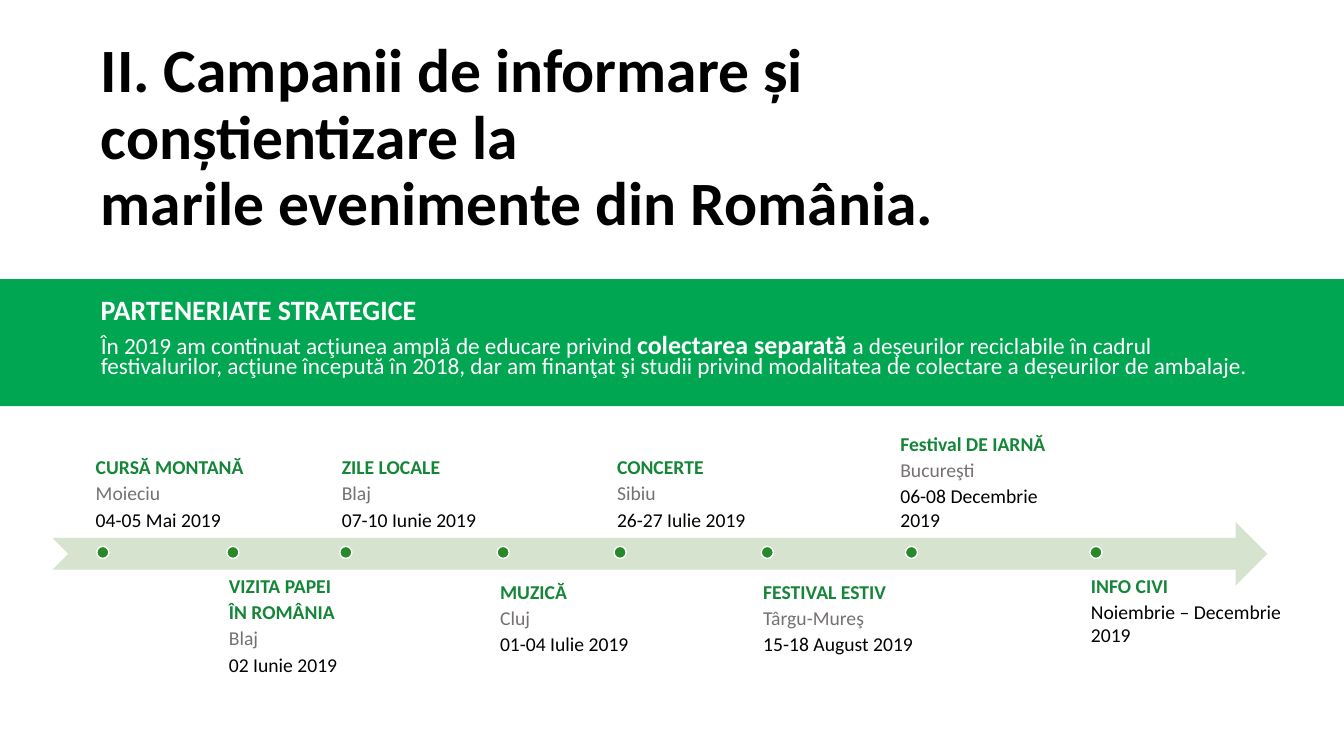
from dataclasses import dataclass

from lxml import etree
from pptx import Presentation
from pptx.dml.color import RGBColor
from pptx.enum import shapes, text
from pptx.oxml.ns import qn
from pptx.util import Inches, Pt


@dataclass(frozen=True)
class Theme:
    font: str = "Calibri"
    band: str = "00A651"
    arrow: str = "D5E3CF"
    dot: str = "278A2A"
    name: str = "158638"
    place: str = "767171"
    black: str = "000000"
    white: str = "FFFFFF"
    title_size: float = 44
    heading_size: float = 20
    body_size: float = 16.6
    strong_size: float = 18.5
    event_size: float = 14


THEME = Theme()

EVENTS = [
    (0.9, 0.96, 1.64, ["CURSĂ MONTANĂ"], "Moieciu", "04-05 Mai 2019"),
    (2.22, 2.25, 1.64, ["VIZITA PAPEI", "ÎN ROMÂNIA"], "Blaj", "02 Iunie 2019"),
    (3.34, 3.37, 2.08, ["ZILE LOCALE"], "Blaj", "07-10 Iunie 2019"),
    (4.91, 4.93, 1.64, ["MUZICĂ"], "Cluj", "01-04 Iulie 2019"),
    (6.07, 6.09, 1.9, ["CONCERTE"], "Sibiu", "26-27 Iulie 2019"),
    (7.52, 7.55, 2.04, ["FESTIVAL ESTIV"], "Târgu-Mureş", "15-18 August 2019"),
    (8.88, 8.98, 1.8, ["Festival DE IARNĂ"], "Bucureşti", "06-08 Decembrie 2019"),
    (10.77, 10.81, 2.04, ["INFO CIVI"], None, "Noiembrie – Decembrie 2019"),
]
LOWERED = {"MUZICĂ", "FESTIVAL ESTIV"}


def rgb(value):
    return RGBColor.from_string(value)


def place(sp, x, y, w, h):
    sp.left, sp.top, sp.width, sp.height = map(Inches, (x, y, w, h))


def set_frame(sp, anchor=text.MSO_ANCHOR.TOP, inset=None):
    tf = sp.text_frame
    tf.word_wrap = True
    tf.auto_size = text.MSO_AUTO_SIZE.NONE
    tf.vertical_anchor = anchor
    if inset is not None:
        tf.margin_left = tf.margin_right = Inches(inset)
        tf.margin_top = tf.margin_bottom = Inches(inset)
    return tf


def add_paragraph(tf, first, spacing=1.0, after=0):
    p = tf.paragraphs[0] if first else tf.add_paragraph()
    p.alignment = text.PP_ALIGN.LEFT
    p.line_spacing = spacing
    p.space_before = Pt(0)
    p.space_after = Pt(after)
    return p


def add_text(p, words, size, color, bold=False):
    r = p.add_run()
    r.text = words
    r.font.name = THEME.font
    r.font.size = Pt(size)
    r.font.bold = bold
    r.font.color.rgb = rgb(color)
    return r


def add_shape(s, kind, box, fill, line=None):
    sp = s.shapes.add_shape(kind, *map(Inches, box))
    sp.shadow.inherit = False
    sp.fill.solid()
    sp.fill.fore_color.rgb = rgb(fill)
    if line:
        sp.line.color.rgb = rgb(line)
        sp.line.width = Pt(1)
    else:
        sp.line.fill.background()
    return sp


def add_title(s, x, y, w, h):
    sp = s.shapes.title
    place(sp, x, y, w, h)
    tf = set_frame(sp)
    lines = ["II. Campanii de informare și conștientizare la", "marile evenimente din România."]
    for i, line in enumerate(lines):
        p = add_paragraph(tf, i == 0, spacing=0.9)
        add_text(p, line, THEME.title_size, THEME.black, bold=True)


def add_band(s, x, y, w, h):
    add_shape(s, shapes.MSO_SHAPE.RECTANGLE, (x, y, w, h), THEME.band)
    heading = s.shapes.add_textbox(*map(Inches, (x + 0.9, y + 0.08, 11.39, 0.44)))
    p = add_paragraph(set_frame(heading), True)
    add_text(p, "PARTENERIATE STRATEGICE", THEME.heading_size, THEME.white, bold=True)

    body = s.placeholders[1]
    place(body, x + 0.9, y + 0.52, 11.67, h - 0.52)
    s.shapes._spTree.append(body._element)
    p = add_paragraph(set_frame(body), True, spacing=0.7)
    pPr = p._p.get_or_add_pPr()
    pPr.set("marL", "0")
    pPr.set("indent", "0")
    etree.SubElement(pPr, qn("a:buNone"))
    add_text(p, "În 2019 am continuat acţiunea amplă de educare privind ", THEME.body_size, THEME.white)
    add_text(p, "colectarea separată ", THEME.strong_size, THEME.white, bold=True)
    add_text(p, "a deşeurilor reciclabile în cadrul festivalurilor, acţiune începută în 2018, "
                "dar am finanţat şi studii privind modalitatea de colectare a deșeurilor de ambalaje.",
             THEME.body_size, THEME.white)


def add_event(s, box, anchor, names, town, date):
    sp = s.shapes.add_textbox(*map(Inches, box))
    tf = set_frame(sp, anchor, inset=0.05)
    lines = [(name, THEME.name, True) for name in names]
    if town:
        lines.append((town, THEME.place, False))
    lines.append((date, THEME.black, False))
    for i, (words, color, bold) in enumerate(lines):
        p = add_paragraph(tf, i == 0, after=2)
        add_text(p, words, THEME.event_size, color, bold)


def add_timeline(s, x, y, w, h):
    add_shape(s, shapes.MSO_SHAPE.NOTCHED_RIGHT_ARROW, (x, y, w, h), THEME.arrow)
    for i, (label_x, dot_x, label_w, names, town, date) in enumerate(EVENTS):
        if i % 2 == 0 and i < 7:
            box, anchor = (label_x, y - 1.13, label_w, 1.27), text.MSO_ANCHOR.BOTTOM
        else:
            drop = 0.06 if names[0] in LOWERED else 0
            box, anchor = (label_x, y + 0.46 + drop, label_w, 1.03), text.MSO_ANCHOR.TOP
        add_event(s, box, anchor, names, town, date)
        add_shape(s, shapes.MSO_SHAPE.OVAL, (dot_x, y + 0.24, 0.12, 0.12), THEME.dot, THEME.white)


def main():
    prs = Presentation()
    prs.slide_width, prs.slide_height = Inches(13.33), Inches(7.5)
    s = prs.slides.add_slide(prs.slide_layouts[1])
    add_title(s, 0.9, 0.34, 9.08, 0.72)
    add_band(s, 0, 2.77, 13.33, 1.26)
    add_timeline(s, 0.52, 5.18, 12.05, 0.63)
    prs.save("out.pptx")


if __name__ == "__main__":
    main()
